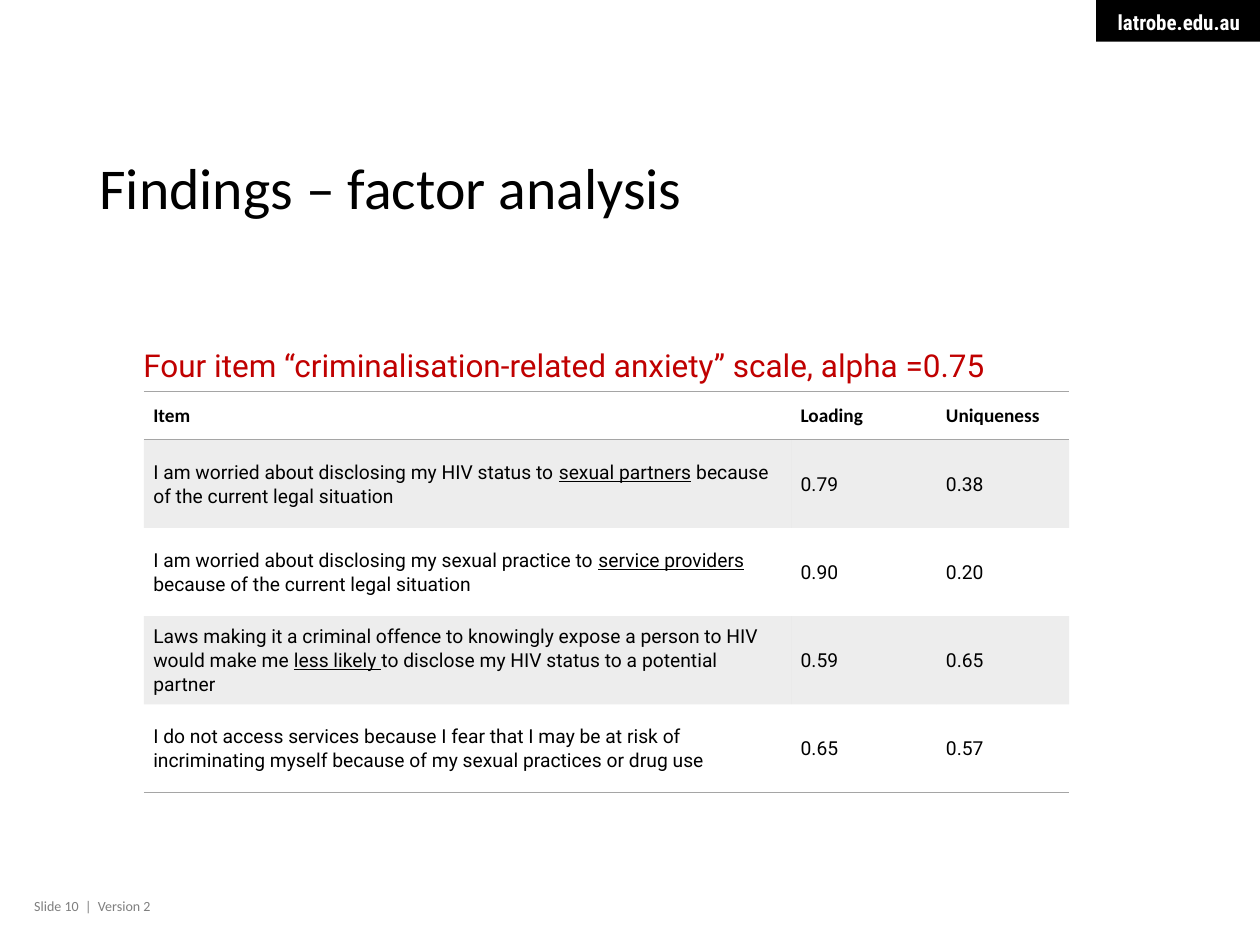
from dataclasses import dataclass

from lxml.etree import SubElement
from pptx import Presentation
from pptx.dml.color import RGBColor
from pptx.enum.shapes import MSO_SHAPE
from pptx.enum.text import MSO_ANCHOR, MSO_AUTO_SIZE, PP_ALIGN
from pptx.oxml import parse_xml
from pptx.oxml.ns import nsdecls, qn
from pptx.util import Cm, Pt

BLACK = RGBColor(0x00, 0x00, 0x00)
WHITE = RGBColor(0xFF, 0xFF, 0xFF)
GREY = RGBColor(0x7F, 0x7F, 0x7F)
RULE = RGBColor(0xA5, 0xA5, 0xA5)
RED = RGBColor(0xC0, 0x00, 0x00)
PLAIN = "{2D5ABB26-0587-4C30-8999-92F81FD0307C}"  # no style, no grid


@dataclass
class Font:
    name: str
    size: float
    color: RGBColor
    bold: bool = False


@dataclass
class Item:
    """A scale item; the words in key are underlined."""
    lead: str
    key: str
    tail: str
    load: str
    unique: str


HEADS = ("Item", "Loading", "Uniqueness")
ITEMS = (
    Item("I am worried about disclosing my HIV status to ", "sexual partners",
         " because of the current legal situation", "0.79", "0.38"),
    Item("I am worried about disclosing my sexual practice to ",
         "service providers ", "because of the current legal situation",
         "0.90", "0.20"),
    Item("Laws making it a criminal offence to knowingly expose a person to "
         "HIV would make me ", "less likely ",
         "to disclose my HIV status to a potential partner", "0.59", "0.65"),
    Item("I do not access services because I fear that I may be at risk of "
         "incriminating myself because of my sexual practices or drug use",
         "", "", "0.65", "0.57"),
)
HEAD = Font("Calibri", 11, BLACK, True)
BODY = Font("Roboto", 11, BLACK)


def style(para, font: Font) -> None:
    para.font.name = font.name
    para.font.size = Pt(font.size)
    para.font.bold = font.bold
    para.font.color.rgb = font.color


def add_label(slide, box: tuple, text: str, font: Font):
    label = slide.shapes.add_textbox(*map(Cm, box))
    frame = label.text_frame
    frame.word_wrap = True
    frame.text = text
    style(frame.paragraphs[0], font)
    return frame


def add_tag(slide) -> None:
    tag = slide.shapes.add_shape(MSO_SHAPE.RECTANGLE, Cm(22.1), 0, Cm(3.3), Cm(0.84))
    tag.shadow.inherit = False
    tag.fill.solid()
    tag.fill.fore_color.rgb = BLACK
    tag.line.fill.background()
    frame = tag.text_frame
    frame.word_wrap = False
    frame.margin_left = frame.margin_right = Cm(0.4)
    frame.margin_top, frame.margin_bottom = Cm(0.2), Cm(0.13)
    frame.text = "latrobe.edu.au"
    para = frame.paragraphs[0]
    para.alignment = PP_ALIGN.RIGHT
    style(para, Font("Roboto Condensed", 12, WHITE, True))


def fill_cell(cell, parts: tuple, font: Font, before: int = 0, after: int = 8) -> None:
    """Write the parts in turn, underlining every second one."""
    cell.vertical_anchor = MSO_ANCHOR.MIDDLE
    cell.margin_left = cell.margin_right = Cm(0.19)
    cell.margin_top = cell.margin_bottom = 0
    para = cell.text_frame.paragraphs[0]
    for i, part in enumerate(parts):
        if part:
            run = para.add_run()
            run.text = part
            if i % 2:
                run.font.underline = True
    para.line_spacing = 1.07
    para.space_before, para.space_after = Pt(before), Pt(after)
    style(para, font)


def shade(cell, on: bool) -> None:
    if not on:
        cell.fill.background()
        return
    cell.fill.solid()
    cell.fill.fore_color.rgb = RULE
    tint = cell._tc.tcPr.find(".//" + qn("a:srgbClr"))
    SubElement(tint, qn("a:alpha"), val="20000")


def rule(cell, sides: str) -> None:
    """Draw the given sides (T, B); lines come before the fill in the XML."""
    for i, side in enumerate(sides):
        cell._tc.tcPr.insert(i, parse_xml(
            f'<a:ln{side} {nsdecls("a")} w="{Pt(1)}"><a:solidFill>'
            f'<a:srgbClr val="{RULE}"/></a:solidFill></a:ln{side}>'))


def add_grid(slide) -> None:
    rows = len(ITEMS) + 1
    frame = slide.shapes.add_table(rows, len(HEADS), Cm(2.9), Cm(7.89), Cm(18.65), Cm(8.09))
    grid = frame.table
    grid._tbl.tblPr.find(qn("a:tableStyleId")).text = PLAIN
    grid.first_row = grid.horz_banding = False
    for col, width in zip(grid.columns, (13.05, 2.93, 2.67)):
        col.width = Cm(width)
    for i, row in enumerate(grid.rows):
        row.height = Cm(1.78 if i else 0.97)
        for cell in row.cells:
            shade(cell, i % 2 == 1)
            rule(cell, "TB" if i == 0 else "B" if i == rows - 1 else "")
    for j, head in enumerate(HEADS):
        fill_cell(grid.cell(0, j), (head,), HEAD)
    for i, item in enumerate(ITEMS, 1):
        fill_cell(grid.cell(i, 0), (item.lead, item.key, item.tail), BODY, 6, 6)
        fill_cell(grid.cell(i, 1), (item.load,), BODY)
        fill_cell(grid.cell(i, 2), (item.unique,), BODY)


def set_title(slide, text: str) -> None:
    title = slide.shapes.title
    title.left, title.top, title.width, title.height = map(Cm, (1.75, 2.01, 21.9, 3.68))
    frame = title.text_frame
    frame.text = text
    frame.auto_size = MSO_AUTO_SIZE.NONE
    frame.vertical_anchor = MSO_ANCHOR.MIDDLE
    para = frame.paragraphs[0]
    para.alignment = PP_ALIGN.LEFT
    para.line_spacing = 0.9
    style(para, Font("Calibri", 33, BLACK))


def main() -> None:
    deck = Presentation()
    deck.slide_width, deck.slide_height = Cm(25.4), Cm(19.05)
    slide = deck.slides.add_slide(deck.slide_layouts[5])
    add_tag(slide)
    foot = add_label(slide, (0.69, 17.96, 6.83, 0.61), "Slide 10  |  Version 2",
                     Font("Calibri", 8, GREY))
    foot.margin_left = 0
    set_title(slide, "Findings – factor analysis")
    add_grid(slide)
    add_label(slide, (2.64, 6.86, 21.56, 1.02),
              "Four item “criminalisation-related anxiety” scale, alpha =0.75",
              Font("Roboto", 18, RED))
    deck.save("out.pptx")


if __name__ == "__main__":
    main()
